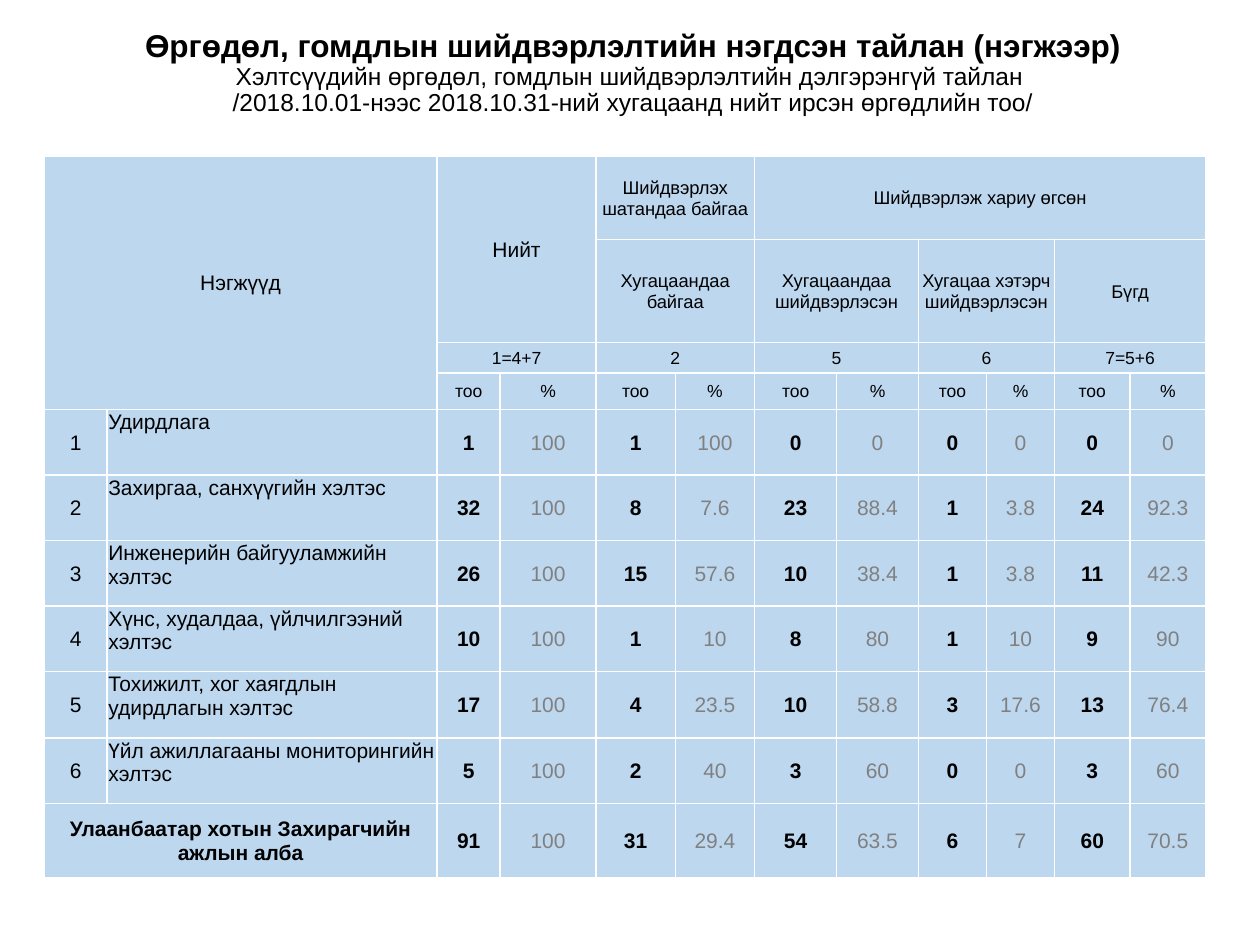
from lxml import etree
from pptx import Presentation
from pptx.dml.color import RGBColor
from pptx.enum import text
from pptx.oxml import ns
from pptx.util import Inches, Pt

COLORS = {"ink": "000000", "percent": "808080", "cell": "BDD7EE", "border": "FFFFFF"}
FONT = "Arial"

TITLE_LINES = [
    ("Өргөдөл, гомдлын шийдвэрлэлтийн нэгдсэн тайлан (нэгжээр)", 18, True),
    ("Хэлтсүүдийн өргөдөл, гомдлын шийдвэрлэлтийн дэлгэрэнгүй тайлан ", 14, False),
    ("/2018.10.01-нээс 2018.10.31-ний хугацаанд нийт ирсэн өргөдлийн тоо/", 14, False),
]

COLUMN_WIDTHS = [0.5, 2.62, 0.5, 0.76, 0.63, 0.63, 0.65, 0.65, 0.54, 0.54, 0.6, 0.6]
ROW_HEIGHTS = [0.66, 0.82, 0.24, 0.29, 0.52, 0.52, 0.52, 0.52, 0.53, 0.52, 0.59]

# row, column, rows spanned, columns spanned, wording, size
HEADERS = [
    (0, 0, 4, 2, "Нэгжүүд", 12),
    (0, 2, 2, 2, "Нийт", 12),
    (0, 4, 1, 2, "Шийдвэрлэх шатандаа байгаа", 10.5),
    (0, 6, 1, 6, "Шийдвэрлэж хариу өгсөн", 10.5),
    (1, 4, 1, 2, "Хугацаандаа байгаа", 10.5),
    (1, 6, 1, 2, "Хугацаандаа шийдвэрлэсэн", 10.5),
    (1, 8, 1, 2, "Хугацаа хэтэрч шийдвэрлэсэн", 10.5),
    (1, 10, 1, 2, "Бүгд", 10.5),
]
FORMULAS = ["1=4+7", "2", "5", "6", "7=5+6"]
UNITS = ["тоо", "%"]

# count and percent in turn
DEPARTMENTS = [
    ("Удирдлага", [1, 100, 1, 100, 0, 0, 0, 0, 0, 0]),
    ("Захиргаа, санхүүгийн хэлтэс", [32, 100, 8, 7.6, 23, 88.4, 1, 3.8, 24, 92.3]),
    ("Инженерийн байгууламжийн хэлтэс", [26, 100, 15, 57.6, 10, 38.4, 1, 3.8, 11, 42.3]),
    ("Хүнс, худалдаа, үйлчилгээний хэлтэс", [10, 100, 1, 10, 8, 80, 1, 10, 9, 90]),
    ("Тохижилт, хог хаягдлын удирдлагын хэлтэс",
     [17, 100, 4, 23.5, 10, 58.8, 3, 17.6, 13, 76.4]),
    ("Үйл ажиллагааны мониторингийн хэлтэс", [5, 100, 2, 40, 3, 60, 0, 0, 3, 60]),
]
TOTAL = ("Улаанбаатар хотын Захирагчийн ажлын алба",
         [91, 100, 31, 29.4, 54, 63.5, 6, 7, 60, 70.5])

FIRST_VALUE_COLUMN = 2
FORMULA_ROW, UNIT_ROW, FIRST_DEPARTMENT_ROW = 2, 3, 4


def add_text(paragraph, wording, size=12, bold=False, color="ink", align="CENTER"):
    paragraph.alignment = getattr(text.PP_ALIGN, align)
    run = paragraph.add_run()
    run.text = str(wording)
    run.font.name = FONT
    run.font.size = Pt(size)
    run.font.bold = bold
    run.font.color.rgb = RGBColor.from_string(COLORS[color])


def add_title(slide):
    box = slide.shapes.add_textbox(Inches(0.82), Inches(0.12), Inches(8.41), Inches(0.93))
    frame = box.text_frame
    frame.word_wrap = True
    frame.vertical_anchor = text.MSO_ANCHOR.MIDDLE
    paragraph = frame.paragraphs[0]
    paragraph.line_spacing = 0.9
    for index, (wording, size, bold) in enumerate(TITLE_LINES):
        if index:
            paragraph.add_line_break()
        add_text(paragraph, wording, size=size, bold=bold)


def style_cell(cell):
    cell.margin_left = cell.margin_right = cell.margin_top = Inches(0.01)
    cell.margin_bottom = 0
    cell.vertical_anchor = text.MSO_ANCHOR.MIDDLE
    properties = cell._tc.get_or_add_tcPr()
    for side in ("lnL", "lnR", "lnT", "lnB"):
        line = etree.SubElement(properties, ns.qn(f"a:{side}"), w=str(Pt(1)))
        fill = etree.SubElement(line, ns.qn("a:solidFill"))
        etree.SubElement(fill, ns.qn("a:srgbClr"), val=COLORS["border"])
    cell.fill.solid()
    cell.fill.fore_color.rgb = RGBColor.from_string(COLORS["cell"])


def fill_cell(table, row, column, wording, rows=1, columns=1, **style):
    cell = table.cell(row, column)
    if rows * columns > 1:
        cell.merge(table.cell(row + rows - 1, column + columns - 1))
    add_text(cell.text_frame.paragraphs[0], wording, **style)
    return cell


def fill_values(table, row, values):
    for index, value in enumerate(values):
        is_count = index % 2 == 0
        fill_cell(table, row, FIRST_VALUE_COLUMN + index, value,
                  bold=is_count, color="ink" if is_count else "percent")


def add_report_table(slide):
    frame = slide.shapes.add_table(
        len(ROW_HEIGHTS), len(COLUMN_WIDTHS), Inches(0.35), Inches(1.24),
        Inches(sum(COLUMN_WIDTHS)), Inches(sum(ROW_HEIGHTS)))
    table = frame.table
    table.first_row = table.horz_banding = False
    for column, width in zip(table.columns, COLUMN_WIDTHS):
        column.width = Inches(width)
    for row, height in zip(table.rows, ROW_HEIGHTS):
        row.height = Inches(height)
    for cell in table.iter_cells():
        style_cell(cell)

    for row, column, rows, columns, wording, size in HEADERS:
        fill_cell(table, row, column, wording, rows, columns, size=size)
    for group, formula in enumerate(FORMULAS):
        column = FIRST_VALUE_COLUMN + group * len(UNITS)
        fill_cell(table, FORMULA_ROW, column, formula, columns=len(UNITS), size=10)
        for offset, unit in enumerate(UNITS):
            fill_cell(table, UNIT_ROW, column + offset, unit, size=10)

    for number, (name, values) in enumerate(DEPARTMENTS, start=1):
        row = FIRST_DEPARTMENT_ROW + number - 1
        fill_cell(table, row, 0, number)
        name_cell = fill_cell(table, row, 1, name, align="LEFT")
        name_cell.vertical_anchor = text.MSO_ANCHOR.TOP
        fill_values(table, row, values)

    name, values = TOTAL
    total_row = len(ROW_HEIGHTS) - 1
    fill_cell(table, total_row, 0, name, columns=2, bold=True)
    fill_values(table, total_row, values)


def main():
    presentation = Presentation()
    presentation.slide_width, presentation.slide_height = Inches(10), Inches(7.5)
    slide = presentation.slides.add_slide(presentation.slide_layouts[6])
    add_title(slide)
    add_report_table(slide)
    presentation.save("out.pptx")


if __name__ == "__main__":
    main()
